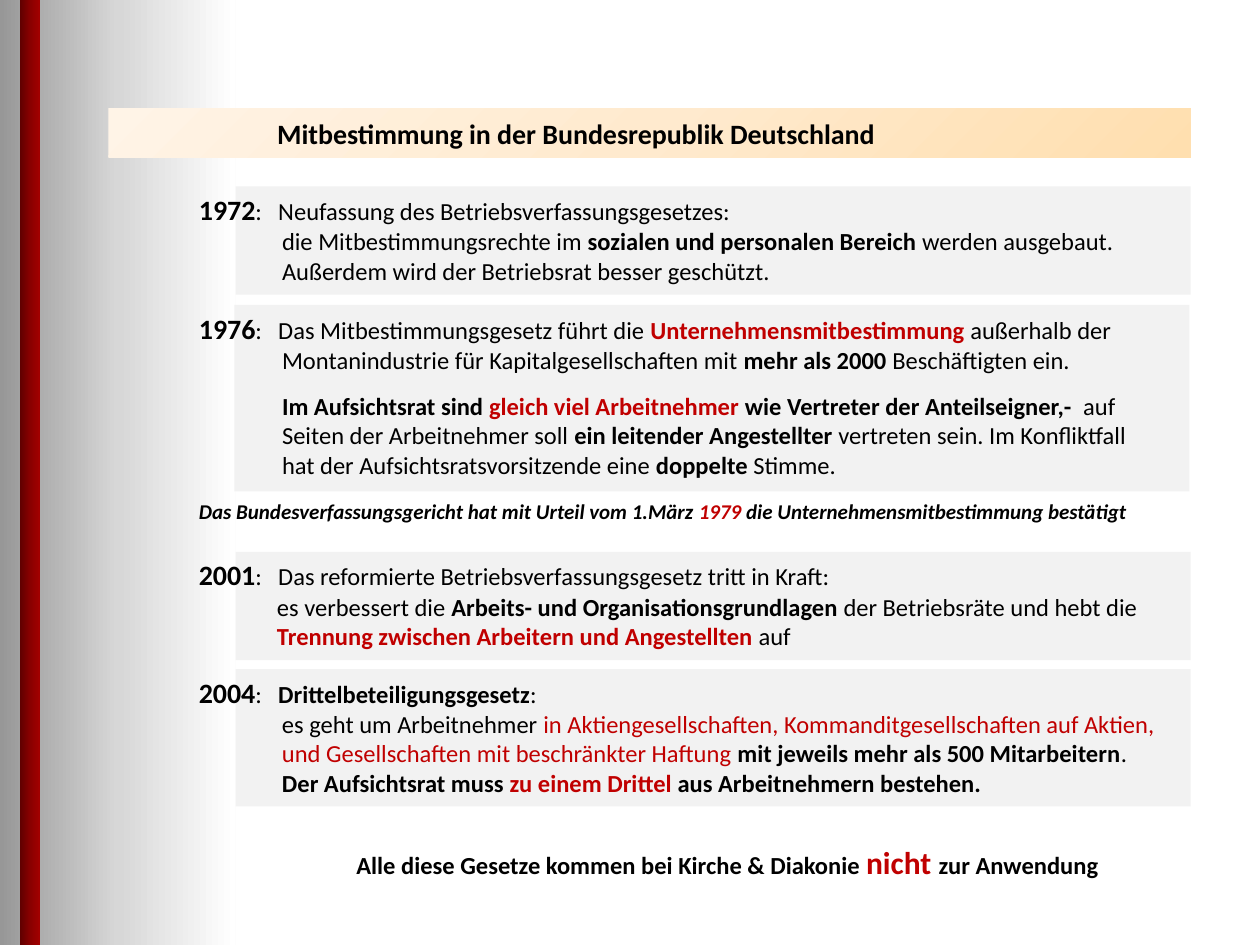
"""Build the slide on the milestones of German co-determination law."""
from lxml import etree
from pptx import Presentation
from pptx import util as u
from pptx.dml.color import RGBColor
from pptx.enum import shapes, text
from pptx.oxml.ns import qn

THEME = {
    "font": "Calibri", "ink": "000000", "accent": "C00000", "panel": "F2F2F2",
    "fade": ("979797", "D7D7D7", "FFFFFF"),
    "stripe": ("600000", "890000", "A20000"),
    "banner": ("FFDFAF", "FFEACE", "FFF4E7"),
    "heading": 16, "body": 14, "note": 12, "emphasis": 18,
}
BOLD = {"bold": True}
RED = {"color": THEME["accent"]}
RED_BOLD = {**BOLD, **RED}
YEAR = {**BOLD, "size": THEME["heading"]}
SHOUT = {**RED_BOLD, "size": THEME["emphasis"]}

TITLE = "Mitbestimmung in der Bundesrepublik Deutschland"
MILESTONES = [
    {"year": "1972", "panel": (1.87, 1.48, 0.86), "width": 7.89, "indent": 0.66, "lines": [
        [("Neufassung des Betriebsverfassungsgesetzes:", {})],
        [("die Mitbestimmungsrechte im ", {}), ("sozialen und personalen Bereich ", BOLD),
         ("werden ausgebaut.", {})],
        [("Außerdem wird der Betriebsrat besser geschützt.", {})]]},
    {"year": "1976", "panel": (1.86, 2.42, 1.48), "width": 7.88, "indent": 0.66, "gap_line": 2, "lines": [
        [("Das Mitbestimmungsgesetz führt die ", {}), ("Unternehmensmitbestimmung", RED_BOLD),
         (" außerhalb der", {})],
        [("Montanindustrie für Kapitalgesellschaften mit ", {}), ("mehr als 2000 ", BOLD),
         ("Beschäftigten ein.", {})],
        [("Im Aufsichtsrat sind ", BOLD), ("gleich viel Arbeitnehmer ", RED_BOLD),
         ("wie Vertreter der Anteilseigner,-  ", BOLD), ("auf", {})],
        [("Seiten der Arbeitnehmer soll ", {}), ("ein leitender Angestellter ", BOLD),
         ("vertreten sein. Im Konfliktfall", {})],
        [("hat der Aufsichtsratsvorsitzende eine ", {}), ("doppelte ", BOLD), ("Stimme.", {})]]},
    {"year": "2001", "panel": (1.87, 4.38, 0.86), "width": 7.73, "indent": 0.62, "lines": [
        [("Das reformierte Betriebsverfassungsgesetz tritt in Kraft:", {})],
        [("es verbessert die ", {}), ("Arbeits- und Organisationsgrundlagen ", BOLD),
         ("der Betriebsräte und hebt die", {})],
        [("Trennung zwischen Arbeitern und Angestellten ", RED_BOLD), ("auf", {})]]},
    {"year": "2004", "panel": (1.87, 5.31, 1.09), "width": 7.97, "indent": 0.66, "lines": [
        [("Drittelbeteiligungsgesetz", BOLD), (":", {})],
        [("es geht um Arbeitnehmer ", {}),
         ("in Aktiengesellschaften, Kommanditgesellschaften auf Aktien,", RED)],
        [("und Gesellschaften mit beschränkter Haftung ", RED),
         ("mit jeweils mehr als 500 Mitarbeitern", BOLD), (".", {})],
        [("Der Aufsichtsrat muss ", BOLD), ("zu einem Drittel ", RED_BOLD),
         ("aus Arbeitnehmern bestehen.", BOLD)]]},
]
RULING = [("Das Bundesverfassungsgericht hat mit Urteil vom 1.März ", BOLD), ("1979 ", RED_BOLD),
          ("die Unternehmensmitbestimmung bestätigt", BOLD)]
CONCLUSION = [("Alle diese Gesetze kommen bei Kirche & Diakonie ", BOLD), ("nicht ", SHOUT),
              ("zur Anwendung", BOLD)]
TEXT_LEFT, PANEL_WIDTH, YEAR_INDENT = 1.48, 7.58, 0.63


def rgb(name):
    return RGBColor.from_string(name)


def set_gradient(shape, colors, from_corner=False):
    shape.fill.gradient()
    gradient = shape._element.spPr.find(qn("a:gradFill"))
    for child in list(gradient):
        gradient.remove(child)
    stops = etree.SubElement(gradient, qn("a:gsLst"))
    for position, color in zip((0, 50000, 100000), colors):
        stop = etree.SubElement(stops, qn("a:gs"), pos=str(position))
        etree.SubElement(stop, qn("a:srgbClr"), val=color)
    if from_corner:
        circle = etree.SubElement(gradient, qn("a:path"), path="circle")
        etree.SubElement(circle, qn("a:fillToRect"), l="100000", t="100000")
    else:
        etree.SubElement(gradient, qn("a:lin"), ang="0", scaled="0")


def add_rectangle(slide, left, top, width, height):
    shape = slide.shapes.add_shape(shapes.MSO_SHAPE.RECTANGLE, *map(u.Inches, (left, top, width, height)))
    shape.shadow.inherit = False
    shape.line.fill.background()
    return shape


def add_text_box(slide, left, top, width, height):
    frame = slide.shapes.add_textbox(*map(u.Inches, (left, top, width, height))).text_frame
    frame.word_wrap = True
    return frame


def write(paragraph, runs, size, italic=False, indent=0, hanging=0):
    properties = paragraph._p.get_or_add_pPr()
    properties.set("marL", str(u.Inches(indent)))
    properties.set("indent", str(-u.Inches(hanging)))
    font = paragraph.font
    font.name, font.size, font.italic = THEME["font"], u.Pt(size), italic
    font.color.rgb = rgb(THEME["ink"])
    for words, style in runs:
        run = paragraph.add_run()
        run.text = words
        run.font.bold = style.get("bold", False)
        if "color" in style:
            run.font.color.rgb = rgb(style["color"])
        if "size" in style:
            run.font.size = u.Pt(style["size"])


def add_milestone(slide, milestone):
    left, top, height = milestone["panel"]
    panel = add_rectangle(slide, left, top, PANEL_WIDTH, height)
    panel.fill.solid()
    panel.fill.fore_color.rgb = rgb(THEME["panel"])
    frame = add_text_box(slide, TEXT_LEFT, top, milestone["width"], height)
    first, *others = milestone["lines"]
    heading = [(milestone["year"], YEAR), (":\t", {}), *first]
    write(frame.paragraphs[0], heading, THEME["body"], indent=YEAR_INDENT, hanging=YEAR_INDENT)
    for number, runs in enumerate(others, 1):
        paragraph = frame.add_paragraph()
        if number == milestone.get("gap_line"):
            paragraph.space_before = u.Pt(9.5)
        write(paragraph, runs, THEME["body"], indent=milestone["indent"])


def add_title(slide):
    title = slide.shapes.title
    title.left, title.top, title.width, title.height = map(u.Inches, (0.86, 0.86, 8.59, 0.39))
    set_gradient(title, THEME["banner"], from_corner=True)
    frame = title.text_frame
    frame.margin_left = u.Inches(1.34)
    frame.margin_top = frame.margin_bottom = 0
    frame.vertical_anchor = text.MSO_ANCHOR.MIDDLE
    frame.auto_size = text.MSO_AUTO_SIZE.NONE
    paragraph = frame.paragraphs[0]
    paragraph.alignment = text.PP_ALIGN.LEFT
    write(paragraph, [(TITLE, BOLD)], THEME["heading"])
    slide.shapes._spTree.append(title._element)


def main():
    presentation = Presentation()
    presentation.slide_width, presentation.slide_height = u.Inches(10), u.Inches(7.5)
    slide = presentation.slides.add_slide(presentation.slide_layouts[5])
    set_gradient(add_rectangle(slide, 0, 0, 1.87, 7.5), THEME["fade"])
    set_gradient(add_rectangle(slide, 0.16, 0, 0.16, 7.5), THEME["stripe"])
    add_title(slide)
    for milestone in MILESTONES:
        add_milestone(slide, milestone)
    ruling = add_text_box(slide, TEXT_LEFT, 3.91, 7.89, 0.3)
    write(ruling.paragraphs[0], RULING, THEME["note"], italic=True)
    conclusion = add_text_box(slide, 2.73, 6.64, 6.56, 0.4)
    write(conclusion.paragraphs[0], CONCLUSION, THEME["body"])
    presentation.save("out.pptx")


if __name__ == "__main__":
    main()
